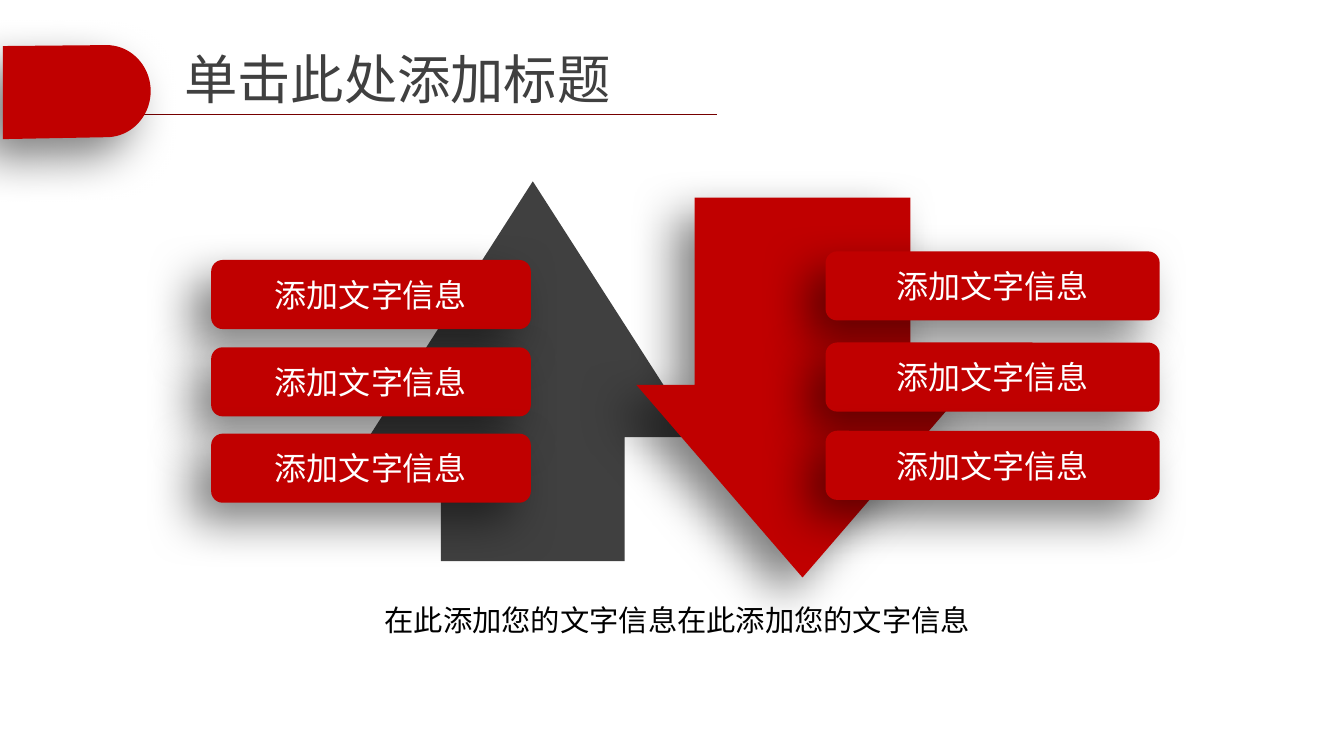
from math import cos, pi, sin

from lxml.etree import SubElement
from pptx import Presentation
from pptx.dml.color import RGBColor
from pptx.enum.shapes import MSO_CONNECTOR, MSO_SHAPE
from pptx.enum.text import MSO_ANCHOR, MSO_AUTO_SIZE, PP_ALIGN
from pptx.oxml.ns import qn
from pptx.util import Inches, Pt

RED, GREY, WHITE, BLACK, RULE = "C00000", "404040", "FFFFFF", "000000", "760000"
CJK = "Noto Sans CJK SC"


def color(hex_value):
    """Turn a hex string into a colour."""
    return RGBColor.from_string(hex_value)


def paint(shape, fill, shadow=True):
    """Give a shape a plain fill, no outline and an optional soft shadow."""
    shape.fill.solid()
    shape.fill.fore_color.rgb = color(fill)
    shape.line.fill.background()
    shape.shadow.inherit = False
    if shadow:
        effects = shape._element.spPr.find(qn("a:effectLst"))
        outer = SubElement(effects, qn("a:outerShdw"), blurRad=str(Pt(35)),
                           dist=str(Pt(20)), dir=str(135 * 60000),
                           algn="tr", rotWithShape="0")
        black = SubElement(outer, qn("a:srgbClr"), val=BLACK)
        SubElement(black, qn("a:alpha"), val="50000")


def write(frame, text, size, font_name, font_color, align):
    """Put one formatted line of text in a frame, centred vertically."""
    frame.text = text
    frame.word_wrap = True
    frame.auto_size = MSO_AUTO_SIZE.NONE
    frame.vertical_anchor = MSO_ANCHOR.MIDDLE
    paragraph = frame.paragraphs[0]
    paragraph.alignment = align
    run = paragraph.runs[0]
    run.font.size = Pt(size)
    run.font.color.rgb = color(font_color)
    run.font.name = font_name
    SubElement(run._r.get_or_add_rPr(), qn("a:ea"), typeface=CJK)


def add_header(slide, left, top, width, height):
    """Draw the rule and the round-ended tab, and place the title."""
    rule = slide.shapes.add_connector(MSO_CONNECTOR.STRAIGHT, Inches(0.92), Inches(1.19),
                                      Inches(7.47), Inches(1.19))
    rule.line.color.rgb = color(RULE)
    rule.line.width = Pt(0.75)
    SubElement(rule._element.spPr, qn("a:effectLst"))

    steps, radius_x, radius_y = 40, 0.46, 0.48
    angles = [pi * (step / steps - 0.5) for step in range(steps + 1)]
    round_end = [(Inches(1.11 + radius_x * cos(a)), Inches(0.95 + radius_y * sin(a)))
                 for a in angles]
    outline = slide.shapes.build_freeform(Inches(0.03), Inches(0.48))
    outline.add_line_segments(round_end + [(Inches(0.03), Inches(1.45))], close=True)
    paint(outline.convert_to_shape(), RED)

    title = slide.shapes.title
    title.left, title.top = Inches(left), Inches(top)
    title.width, title.height = Inches(width), Inches(height)
    frame = title.text_frame
    frame.margin_left = frame.margin_right = Inches(0.12)
    frame.margin_top = frame.margin_bottom = Inches(0.06)
    write(frame, "单击此处添加标题", 40, "Arial", GREY, PP_ALIGN.LEFT)


def add_arrow(slide, kind, box, shaft, head, fill, shadow):
    """Draw a block arrow with the given shaft and head proportions."""
    arrow = slide.shapes.add_shape(kind, *map(Inches, box))
    arrow.adjustments[0], arrow.adjustments[1] = shaft, head
    paint(arrow, fill, shadow)


def add_labels(slide, left, tops, width, height=0.72):
    """Stack red rounded labels in one column."""
    for top in tops:
        label = slide.shapes.add_shape(MSO_SHAPE.ROUNDED_RECTANGLE, Inches(left),
                                       Inches(top), Inches(width), Inches(height))
        paint(label, RED)
        write(label.text_frame, "添加文字信息", 24, CJK, WHITE, PP_ALIGN.CENTER)


def add_caption(slide, left, top, width, height):
    """Write the line under the arrows."""
    caption = slide.shapes.add_textbox(Inches(left), Inches(top),
                                       Inches(width), Inches(height))
    frame = caption.text_frame
    frame.margin_left = frame.margin_right = Inches(0.11)
    frame.margin_top = frame.margin_bottom = Inches(0.06)
    write(frame, "在此添加您的文字信息" * 2, 22, CJK, BLACK, PP_ALIGN.CENTER)


def main():
    """Build the slide and save it."""
    deck = Presentation()
    deck.slide_width, deck.slide_height = Inches(14), Inches(7.88)
    slide = deck.slides.add_slide(deck.slide_layouts[5])
    add_header(slide, 1.8, 0.32, 9.47, 0.99)
    add_arrow(slide, MSO_SHAPE.UP_ARROW, (3.84, 1.89, 3.42, 3.96), 0.56, 0.78, GREY, False)
    add_arrow(slide, MSO_SHAPE.DOWN_ARROW, (6.63, 2.06, 3.46, 3.96), 0.65, 0.58, RED, True)
    add_labels(slide, 2.2, (2.71, 3.62, 4.52), 3.33)
    add_labels(slide, 8.6, (2.62, 3.57, 4.49), 3.48)
    add_caption(slide, 3.38, 6.19, 7.35, 0.54)
    deck.save("out.pptx")


if __name__ == "__main__":
    main()
